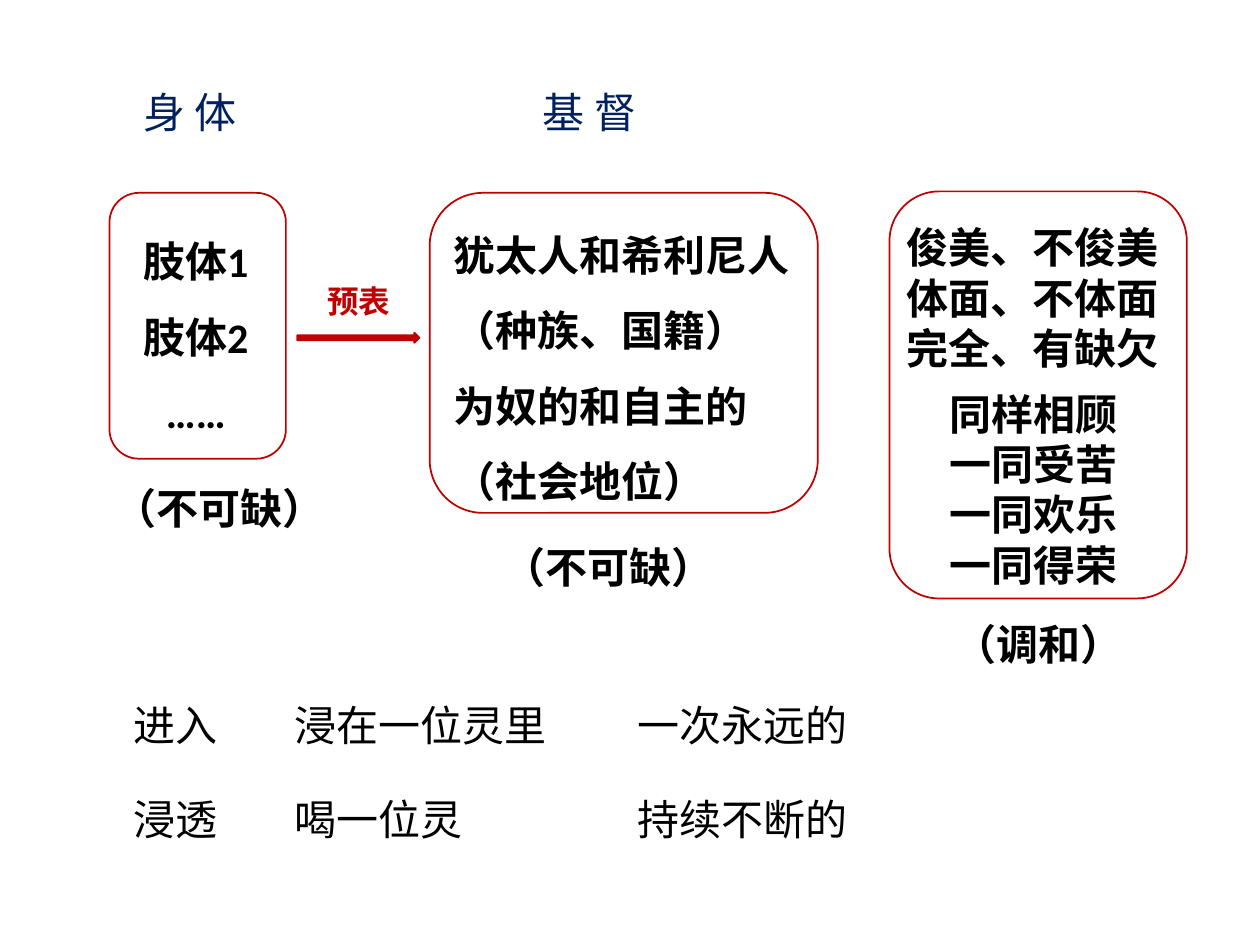
from lxml import etree
from pptx import Presentation
from pptx.dml.color import RGBColor
from pptx.enum.shapes import MSO_SHAPE as SHAPE
from pptx.enum.text import MSO_AUTO_SIZE as AUTO, PP_ALIGN as ALIGN
from pptx.oxml.ns import qn
from pptx.util import Pt

BLACK = RGBColor(0x00, 0x00, 0x00)
NAVY = RGBColor(0x00, 0x20, 0x60)
RED = RGBColor(0xC0, 0x00, 0x00)
BODY, CJK = "Calibri", "Noto Sans CJK SC"

# Content: (left, top, width, height) in points, then lines
HEADINGS = [
    ((74.9, 49.7, 69.8, 36), "身 体"),
    ((303.1, 49.7, 76.3, 36), "基 督"),
]
MEMBERS = ((62.6, 116.6, 98.6, 138.2), ["肢体1", "肢体2", "……"])
PEOPLES = ((252, 113, 210.2, 181.4),
           ["犹太人和希利尼人", "（种族、国籍）", "为奴的和自主的", "（社会地位）"])
CONTRASTS = ((511.2, 123.1, 169.9, 94.3), ["俊美、不俊美", "体面、不体面", "完全、有缺欠"])
SHARING = ((535.7, 218.2, 110.9, 123.8), ["同样相顾", "一同受苦", "一同欢乐", "一同得荣"])
CAPTIONS = [
    ((58.3, 272.2, 134.6, 36), "（不可缺）"),
    ((280.8, 306, 134.6, 36), "（不可缺）"),
    ((538.6, 349.9, 110.9, 36), "（调和）"),
]
FRAMES = [
    (62.6, 110.2, 100.8, 151.9),
    (245.5, 110.2, 221.8, 182.9),
    (508.3, 109.4, 169.9, 232.6),
]
ARROW = (169.9, 190.1, 69.8, 5.8)
ARROW_LABEL = ((180, 161.3, 50.4, 28.8), "预表")
ROWS = [
    ["进入", "浸在一位灵里", "一次永远的"],
    ["浸透", "喝一位灵", "持续不断的"],
]
COLUMN_LEFTS = [69.1, 161.3, 357.1]
ROW_TOP, ROW_STEP, ROW_HEIGHT = 399.6, 54, 36

prs = Presentation()
prs.slide_width, prs.slide_height = Pt(720), Pt(540)
slide = prs.slides.add_slide(prs.slide_layouts[6])


def add_text(box, lines, font=BODY, color=BLACK, bold=True, size=24,
             spacing=None, align=ALIGN.LEFT, wrap=False):
    sp = slide.shapes.add_textbox(*map(Pt, box))
    tf = sp.text_frame
    tf.word_wrap = wrap
    tf.auto_size = AUTO.SHAPE_TO_FIT_TEXT
    if font == CJK:  # its line is tall enough without vertical insets
        tf.margin_top = tf.margin_bottom = 0
    for i, line in enumerate(lines):
        p = tf.paragraphs[0] if i == 0 else tf.add_paragraph()
        p.alignment = align
        if spacing:
            p.line_spacing = spacing
        r = p.add_run()
        r.text = line
        r.font.name, r.font.size, r.font.bold = font, Pt(size), bold
        r.font.color.rgb = color
        etree.SubElement(r.font._element, qn("a:ea")).set("typeface", font)


def add_outline(kind, box):
    sp = slide.shapes.add_shape(kind, *map(Pt, box))
    sp.shadow.inherit = False
    sp.fill.background()
    sp.line.color.rgb = RED
    sp.line.width = Pt(1)
    return sp


# Headings
for box, text in HEADINGS:
    add_text(box, [text], CJK, NAVY, bold=False)

# Text of the three groups
add_text(*MEMBERS, spacing=1.5, align=ALIGN.CENTER, wrap=True)
add_text(*PEOPLES, spacing=1.5, wrap=True)
add_text(*CONTRASTS, wrap=True)
add_text(*SHARING)
for box, text in CAPTIONS:
    add_text(box, [text])

# Lower grid
for i, row in enumerate(ROWS):
    for left, text in zip(COLUMN_LEFTS, row):
        width = 24 * len(text) + 14.4
        add_text((left, ROW_TOP + i * ROW_STEP, width, ROW_HEIGHT), [text], CJK, bold=False)

# Frames, arrow and its label
for box in FRAMES:
    add_outline(SHAPE.ROUNDED_RECTANGLE, box)
arrow = add_outline(SHAPE.RIGHT_ARROW, ARROW)
arrow.fill.solid()
arrow.fill.fore_color.rgb = RED
add_text(ARROW_LABEL[0], [ARROW_LABEL[1]], CJK, RED, size=18)

prs.save("out.pptx")
